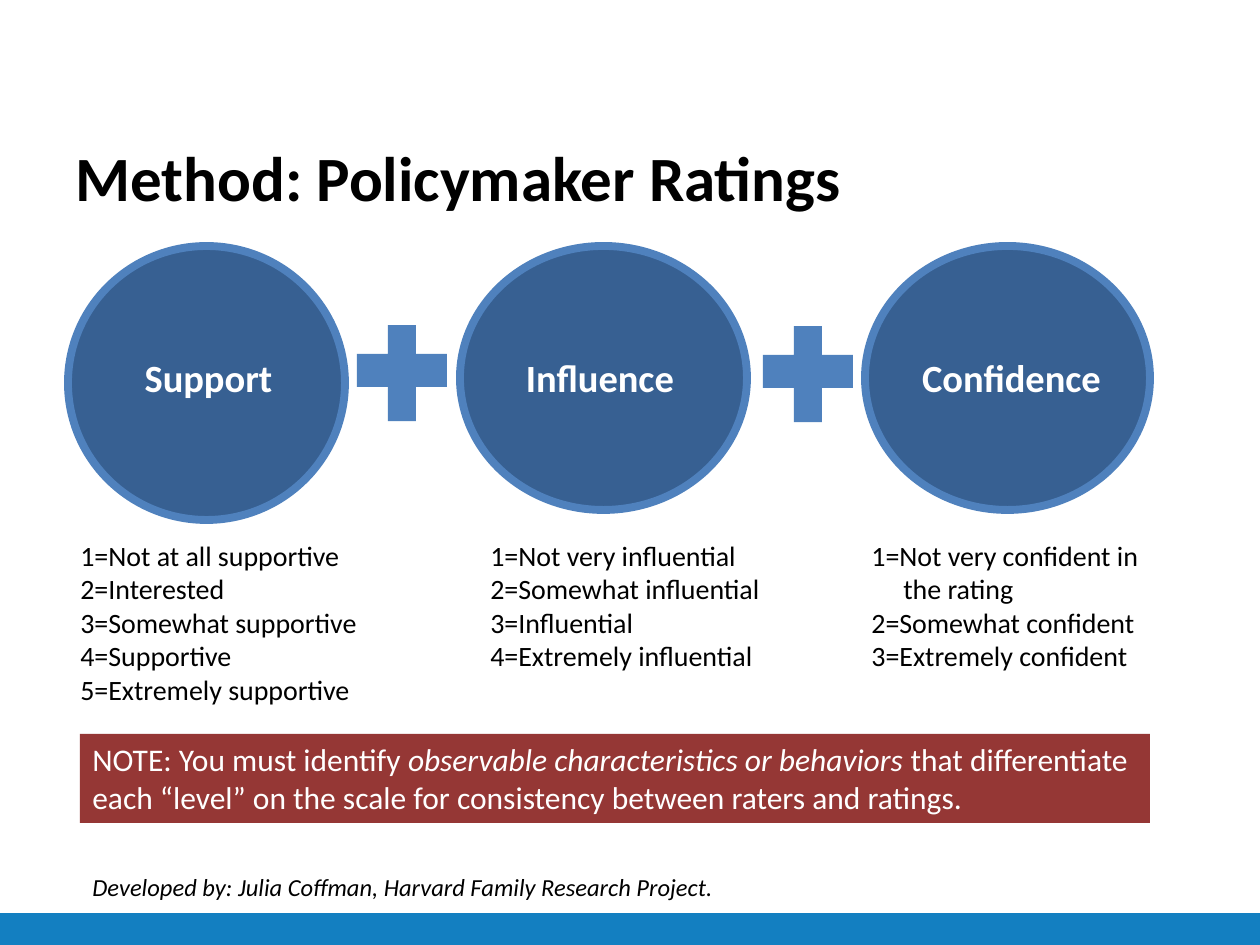
from pptx import Presentation
from pptx.dml.color import RGBColor
from pptx.enum.shapes import MSO_SHAPE as Shape
from pptx.enum.text import MSO_ANCHOR as Anchor, PP_ALIGN as Align
from pptx.util import Emu, Pt

PX = 914400 / 126
BLACK = RGBColor(0x00, 0x00, 0x00)
WHITE = RGBColor(0xFF, 0xFF, 0xFF)
NAVY = RGBColor(0x37, 0x60, 0x92)
BLUE = RGBColor(0x4F, 0x81, 0xBD)
RED = RGBColor(0x95, 0x37, 0x35)
FOOTER_BLUE = RGBColor(0x13, 0x7F, 0xC1)


def px(*lengths):
    return [Emu(round(length * PX)) for length in lengths]


class SlideBuilder:
    font_name = "Calibri"

    def __init__(self, slide):
        self.slide = slide

    def style(self, paragraph, size, color=BLACK, bold=False, italic=None, align=Align.LEFT):
        paragraph.alignment = align
        font = paragraph.font
        font.name, font.size = self.font_name, Pt(size)
        font.bold, font.italic = bold, italic
        font.color.rgb = color

    def title(self, text, box):
        shape = self.slide.shapes.title
        shape.left, shape.top, shape.width, shape.height = px(*box)
        shape.text_frame.text = text
        shape.text_frame.vertical_anchor = Anchor.TOP
        self.style(shape.text_frame.paragraphs[0], 36, bold=True)

    def fill(self, shape, color):
        shape.shadow.inherit = False
        shape.fill.solid()
        shape.fill.fore_color.rgb = color
        shape.line.fill.background()
        return shape

    def shape(self, kind, box, color):
        return self.fill(self.slide.shapes.add_shape(kind, *px(*box)), color)

    def circle(self, box):
        shape = self.shape(Shape.OVAL, box, NAVY)
        shape.line.color.rgb = BLUE
        shape.line.width = Pt(4.5)

    def plus(self, left, top):
        x1, x2, x3 = left + 31, left + 59, left + 90
        y1, y2, y3 = top + 29, top + 62, top + 96
        builder = self.slide.shapes.build_freeform(left, top + 29, scale=PX)
        builder.add_line_segments([
            (x1, y1), (x1, top), (x2, top), (x2, y1), (x3, y1), (x3, y2),
            (x2, y2), (x2, y3), (x1, y3), (x1, y2), (left, y2),
        ], close=True)
        self.fill(builder.convert_to_shape(), BLUE)

    def text(self, lines, box, size, wrap=True, inset=True, hanging=0, **style):
        frame = self.slide.shapes.add_textbox(*px(*box)).text_frame
        frame.word_wrap = wrap
        if not inset:
            frame.margin_left = frame.margin_right = 0
            frame.margin_top = frame.margin_bottom = 0
        for index, line in enumerate(lines):
            paragraph = frame.add_paragraph() if index else frame.paragraphs[0]
            paragraph.text = line
            if index == 0 and hanging:
                indent = px(hanging)[0]
                properties = paragraph._p.get_or_add_pPr()
                properties.set("marL", str(indent))
                properties.set("indent", str(-indent))
            self.style(paragraph, size, **style)

    def note(self, runs, box):
        frame = self.shape(Shape.RECTANGLE, box, RED).text_frame
        frame.word_wrap = True
        frame.vertical_anchor = Anchor.TOP
        paragraph = frame.paragraphs[0]
        self.style(paragraph, 18, WHITE)
        for text, italic in runs:
            run = paragraph.add_run()
            run.text = text
            run.font.italic = italic


def main():
    presentation = Presentation()
    presentation.slide_width, presentation.slide_height = px(1260, 945)
    slide = presentation.slides.add_slide(presentation.slide_layouts[5])
    builder = SlideBuilder(slide)

    builder.shape(Shape.RECTANGLE, (0, 913, 1260, 32), FOOTER_BLUE)
    builder.title("Method: Policymaker Ratings", (63, 132, 1134, 158))

    ratings = [
        ("Support", (68, 246, 277, 274), (144, 129), (68, 304), 0,
         ["1=Not at all supportive", "2=Interested", "3=Somewhat supportive",
          "4=Supportive", "5=Extremely supportive"]),
        ("Influence", (460, 246, 287, 264), (525, 150), (478, 301), 0,
         ["1=Not very influential", "2=Somewhat influential",
          "3=Influential", "4=Extremely influential"]),
        ("Confidence", (865, 246, 285, 264), (921, 181), (859, 294), 32,
         ["1=Not very confident in the rating", "2=Somewhat confident",
          "3=Extremely confident"]),
    ]
    for name, circle, (label_left, label_width), (left, width), hanging, levels in ratings:
        builder.circle(circle)
        builder.text([name], (label_left, 354, label_width, 47), 22, wrap=False,
                     inset=False, color=WHITE, bold=True, align=Align.CENTER)
        height = 149 if hanging else 15 + 34 * len(levels)
        builder.text(levels, (left, 532, width, height), 16, hanging=hanging)

    builder.plus(357, 325)
    builder.plus(763, 326)

    builder.note([
        ("NOTE: You must identify ", False),
        ("observable characteristics or behaviors ", True),
        ("that differentiate each “level” on the scale for consistency "
         "between raters and ratings.", False),
    ], (80, 734, 1070, 89))
    builder.text(["Developed by: Julia Coffman, Harvard Family Research Project."],
                 (80, 866, 651, 43), 14, wrap=False, italic=True)

    presentation.save("out.pptx")


if __name__ == "__main__":
    main()
